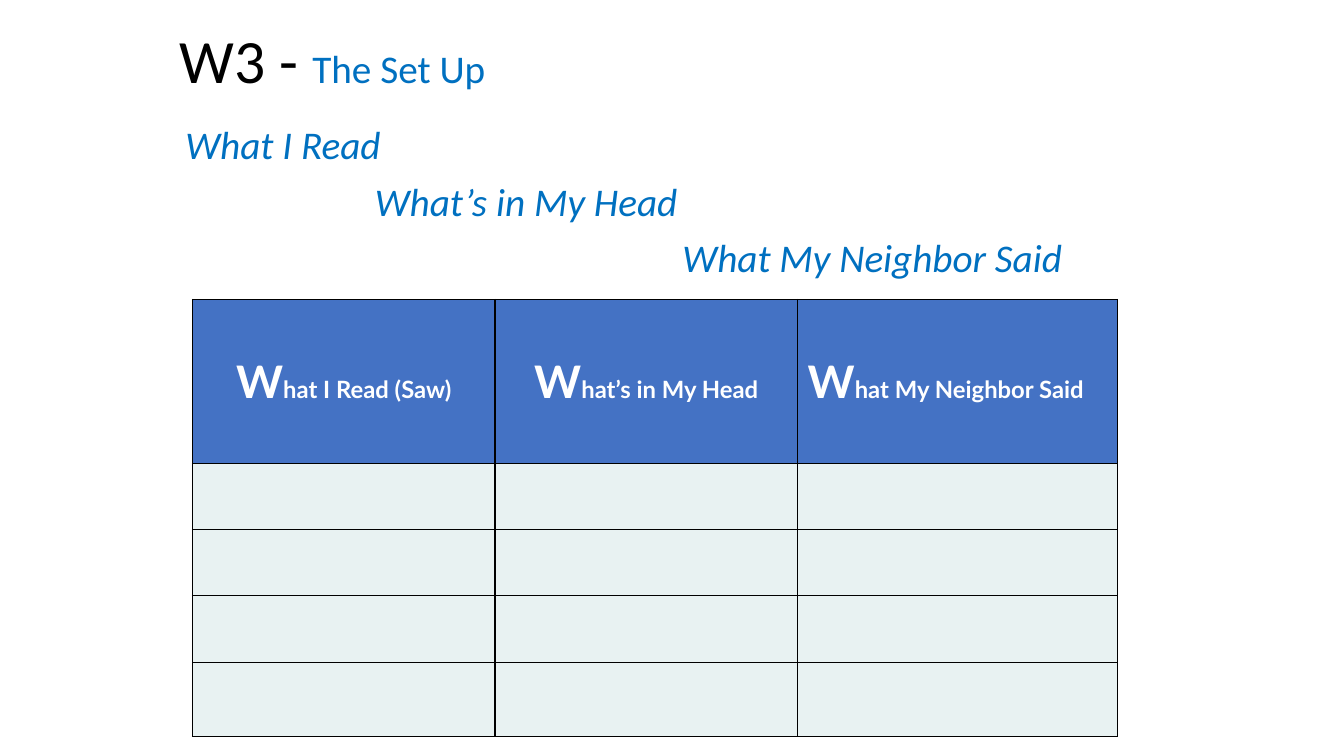
from dataclasses import dataclass

from lxml import etree
from pptx import Presentation
from pptx import util as u
from pptx.dml import color
from pptx.enum import text
from pptx.oxml import ns

COLORS = {
    "title": "000000",
    "accent": "0070C0",
    "header": "4472C4",
    "header_text": "FFFFFF",
    "row": "E8F2F2",
    "border": "000000",
}
COLUMN_WIDTHS = (3, 3, 3.17)
ROW_HEIGHTS = (1.63, 0.65, 0.66, 0.66, 0.74)


@dataclass(frozen=True)
class Span:
    words: str
    size: float
    color: str
    font: str = "Calibri"
    bold: bool = False
    italic: bool = False


@dataclass(frozen=True)
class Step:
    words: str
    indent: float


@dataclass(frozen=True)
class Heading:
    rest: str
    align: text.PP_ALIGN


STEPS = (
    Step("What I Read", 0),
    Step("What’s in My Head", 1.88),
    Step("What My Neighbor Said", 4.93),
)
HEADINGS = (
    Heading("hat I Read (Saw)", text.PP_ALIGN.CENTER),
    Heading("hat’s in My Head", text.PP_ALIGN.CENTER),
    Heading("hat My Neighbor Said", text.PP_ALIGN.LEFT),
)


def rgb(name: str) -> color.RGBColor:
    return color.RGBColor.from_string(COLORS[name])


def apply(target, formats: dict) -> None:
    """Set every named format value on the target."""
    for name, value in formats.items():
        setattr(target, name, value)


def add_span(paragraph, span: Span) -> None:
    run = paragraph.add_run()
    run.text = span.words
    apply(run.font, {"name": span.font, "size": u.Pt(span.size),
                     "bold": span.bold, "italic": span.italic})
    run.font.color.rgb = rgb(span.color)


def add_text_frame(slide, left: float, top: float, width: float, height: float,
                   formats: dict):
    box = slide.shapes.add_textbox(*map(u.Inches, (left, top, width, height)))
    apply(box.text_frame, {"word_wrap": True, **formats})
    return box.text_frame


def add_title(slide) -> None:
    side, edge = u.Inches(0.07), u.Inches(0.04)
    title = add_text_frame(slide, 1.71, 0.17, 9, 0.92, {
        "vertical_anchor": text.MSO_ANCHOR.MIDDLE,
        "margin_left": side, "margin_right": side,
        "margin_top": edge, "margin_bottom": edge,
    })
    line = title.paragraphs[0]
    line.line_spacing = 0.9
    add_span(line, Span("W3 - ", 44, "title"))
    add_span(line, Span("The Set Up", 28, "accent"))


def add_steps(slide) -> None:
    """Add the three lines, each stepped further to the right."""
    frame = add_text_frame(slide, 1.74, 1.2, 9.86, 1.42, {})
    for number, step in enumerate(STEPS):
        line = frame.add_paragraph() if number else frame.paragraphs[0]
        apply(line, {"line_spacing": 0.9, "space_before": u.Pt(10)})
        line._p.get_or_add_pPr().set("marL", str(u.Inches(step.indent)))
        add_span(line, Span(step.words, 28, "accent", italic=True))


def add_borders(cell) -> None:
    properties = cell._tc.get_or_add_tcPr()
    for side in ("a:lnL", "a:lnR", "a:lnT", "a:lnB"):
        border = etree.SubElement(properties, ns.qn(side), w=str(u.Pt(1)))
        fill = etree.SubElement(border, ns.qn("a:solidFill"))
        etree.SubElement(fill, ns.qn("a:srgbClr"), val=COLORS["border"])


def add_heading(cell, heading: Heading) -> None:
    cell.vertical_anchor = text.MSO_ANCHOR.MIDDLE
    line = cell.text_frame.paragraphs[0]
    line.alignment = heading.align
    for words, size in (("W", 32), (heading.rest, 17)):
        add_span(line, Span(words, size, "header_text", "Lato", bold=True))


def add_notes_table(slide) -> None:
    area = (1.91, 2.97, sum(COLUMN_WIDTHS), sum(ROW_HEIGHTS))
    table = slide.shapes.add_table(len(ROW_HEIGHTS), len(COLUMN_WIDTHS),
                                   *map(u.Inches, area)).table
    apply(table, {"first_row": True, "horz_banding": False})
    for column, width in zip(table.columns, COLUMN_WIDTHS):
        column.width = u.Inches(width)
    for number, (row, height) in enumerate(zip(table.rows, ROW_HEIGHTS)):
        row.height = u.Inches(height)
        for cell in row.cells:
            add_borders(cell)
            cell.fill.solid()
            cell.fill.fore_color.rgb = rgb("row" if number else "header")
    for cell, heading in zip(table.rows[0].cells, HEADINGS):
        add_heading(cell, heading)


def main() -> None:
    deck = Presentation()
    apply(deck, {"slide_width": u.Inches(13.33), "slide_height": u.Inches(7.5)})
    slide = deck.slides.add_slide(deck.slide_layouts[6])
    add_steps(slide)
    add_title(slide)
    add_notes_table(slide)
    deck.save("out.pptx")


if __name__ == "__main__":
    main()
